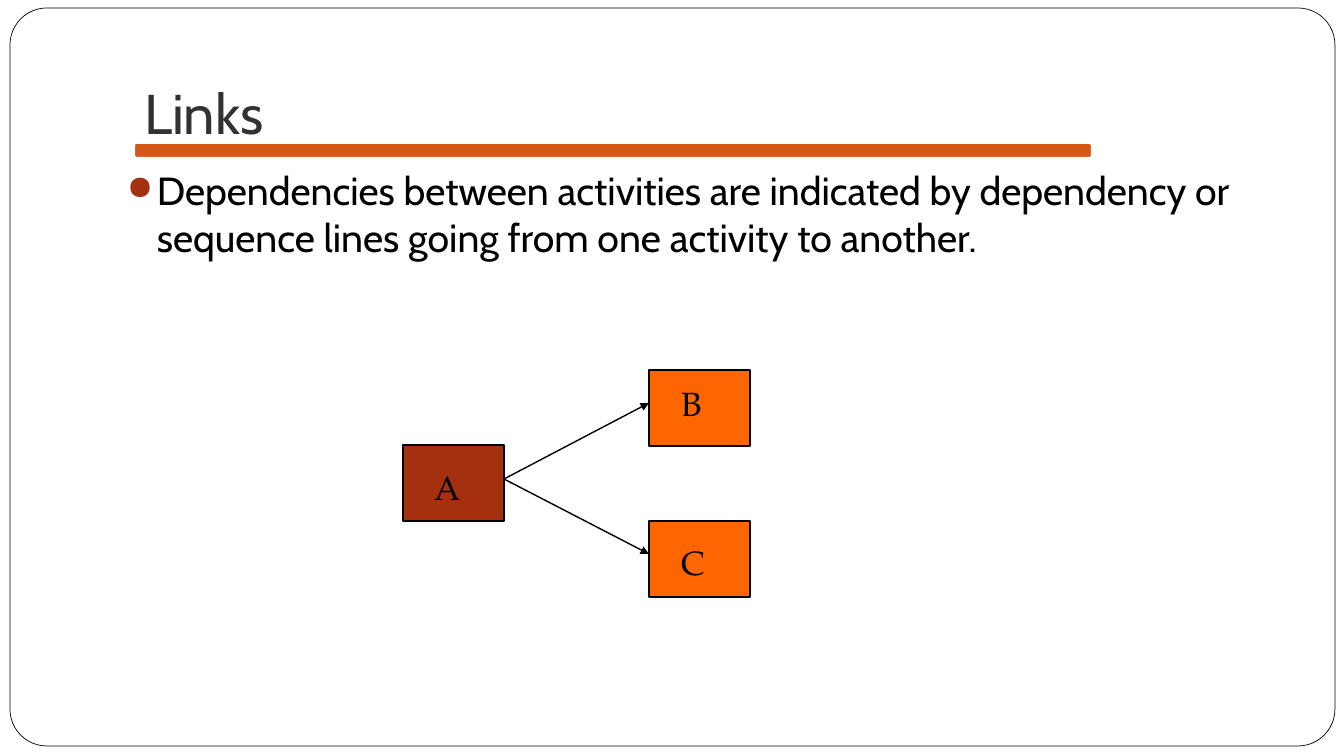
"""Build the "Links" slide: activity A leading to activities B and C."""
from lxml import etree
from pptx import Presentation
from pptx import util as u
from pptx.dml.color import RGBColor
from pptx.enum import shapes, text
from pptx.oxml.ns import qn

PX = 914400 / 100.8
BLACK = RGBColor(0x00, 0x00, 0x00)
WHITE = RGBColor(0xFF, 0xFF, 0xFF)
GREY = RGBColor(0x32, 0x32, 0x32)
RUST = RGBColor(0xA5, 0x30, 0x0F)
BAR = RGBColor(0xD5, 0x58, 0x16)
ORANGE = RGBColor(0xFF, 0x66, 0x00)
RECT = shapes.MSO_SHAPE.RECTANGLE
ROUND = shapes.MSO_SHAPE.ROUNDED_RECTANGLE


def px(*lengths):
    return [u.Emu(round(n * PX)) for n in lengths]


def style(p, size, name, color):
    p.font.size = u.Pt(size)
    p.font.name = name
    p.font.color.rgb = color


prs = Presentation()
prs.slide_width, prs.slide_height = px(1344, 756)
s = prs.slides.add_slide(prs.slide_layouts[5])

for kind, box, fill, line, width in [
    (ROUND, (10, 8, 1325, 738), WHITE, BLACK, 0.5),
    (ROUND, (134, 143, 958, 15), BAR, WHITE, 1.5),
    (RECT, (403, 445, 101, 76), RUST, BLACK, 1),
    (RECT, (649, 370, 101, 76), ORANGE, BLACK, 1),
    (RECT, (649, 521, 101, 76), ORANGE, BLACK, 1),
]:
    sp = s.shapes.add_shape(kind, *px(*box))
    sp.shadow.inherit = False
    sp.fill.solid()
    sp.fill.fore_color.rgb = fill
    sp.line.color.rgb = line
    sp.line.width = u.Pt(width)
s.shapes[1].adjustments[0] = 0.05

title = s.shapes.title
title.left, title.top, title.width, title.height = px(134, 30, 1142, 126)
tf = title.text_frame
tf.text = "Links"
tf.vertical_anchor = text.MSO_ANCHOR.BOTTOM
tf.margin_left, tf.margin_top, tf.margin_right, tf.margin_bottom = px(10, 5, 10, 10)
p = tf.paragraphs[0]
p.alignment = text.PP_ALIGN.LEFT
style(p, 40, "Cabin", GREY)
s.shapes[2]._element.addnext(title._element)

tf = s.shapes.add_textbox(*px(117, 161, 1205, 529)).text_frame
tf.word_wrap = True
p = tf.paragraphs[0]
p.text = ("Dependencies between activities are indicated by dependency or "
          "sequence lines going from one activity to another.")
p.space_before = u.Pt(5.8)
style(p, 28, "Cabin", BLACK)
pPr = p._p.get_or_add_pPr()
indent = px(30)[0]
pPr.set("marL", str(indent))
pPr.set("indent", str(-indent))
color = etree.Element(qn("a:buClr"))
etree.SubElement(color, qn("a:srgbClr"), val=str(RUST))
size = etree.Element(qn("a:buSzPct"), val="85000")
bullet = etree.Element(qn("a:buChar"), char="●")
for i, element in enumerate([color, size, bullet], 1):
    pPr.insert(i, element)

for end_y in (554, 403):
    link = s.shapes.add_connector(shapes.MSO_CONNECTOR.STRAIGHT, *px(504, 479, 649, end_y))
    link.line.color.rgb = BLACK
    link.line.width = u.Pt(1)
    etree.SubElement(link.line._get_or_add_ln(), qn("a:tailEnd"), type="triangle")
    etree.SubElement(link._element.spPr, qn("a:effectLst"))

for name, x, y in [("A", 425, 462), ("B", 672, 378), ("C", 672, 537)]:
    tf = s.shapes.add_textbox(*px(x, y, 56, 50)).text_frame
    tf.word_wrap = True
    tf.auto_size = text.MSO_AUTO_SIZE.SHAPE_TO_FIT_TEXT
    p = tf.paragraphs[0]
    p.text = name
    style(p, 24, "TeX Gyre Pagella", BLACK)

prs.save("out.pptx")
